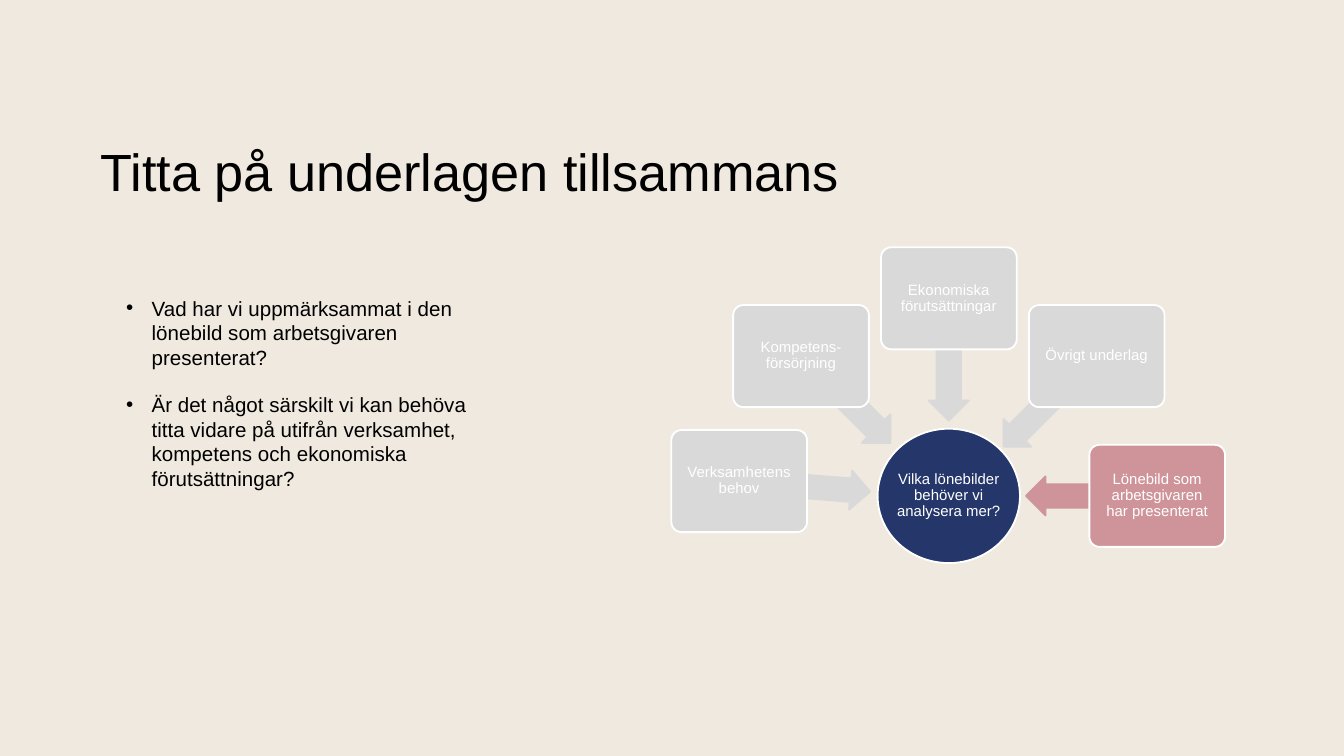
import pptx
import pptx.util
import pptx.dml.color
import pptx.enum.shapes
import pptx.enum.text
import pptx.oxml.ns
from lxml import etree

Inches = pptx.util.Inches
Pt = pptx.util.Pt
RGBColor = pptx.dml.color.RGBColor
MSO_SHAPE = pptx.enum.shapes.MSO_SHAPE
PP_ALIGN = pptx.enum.text.PP_ALIGN
MSO_ANCHOR = pptx.enum.text.MSO_ANCHOR

CREAM = RGBColor(0xEF, 0xE9, 0xDF)
NAVY = RGBColor(0x24, 0x36, 0x6A)
GREY = RGBColor(0xD9, 0xD9, 0xD9)
ROSE = RGBColor(0xCF, 0x94, 0x99)
WHITE = RGBColor(0xFF, 0xFF, 0xFF)
BLACK = RGBColor(0x00, 0x00, 0x00)
FONT = "Arial"

SLIDE_WIDTH = Inches(10)
SLIDE_HEIGHT = SLIDE_WIDTH * 9 // 16

TITLE = "Titta på underlagen tillsammans"
QUESTIONS = [
    "Vad har vi uppmärksammat i den lönebild som arbetsgivaren presenterat?",
    "Är det något särskilt vi kan behöva titta vidare på utifrån verksamhet, "
    "kompetens och ekonomiska förutsättningar?",
]
HUB_TEXT = "Vilka lönebilder behöver vi analysera mer?"
HUB_CENTER = (7.06, 3.69)
HUB_SIZE = (1.06, 1)
NODE_SIZE = (1.01, 0.76)

# text, node center, arrow center, arrow size, arrow rotation, colour
SOURCES = [
    ("Verksamhetens behov", (5.5, 3.58), (5.99, 3.62), (0.97, 0.29), 184.5, GREY),
    ("Kompetens-försörjning", (5.96, 2.65), (6.3, 2.97), (0.92, 0.3), 225, GREY),
    ("Ekonomiska förutsättningar", (7.06, 2.22), (7.06, 2.67), (0.92, 0.3), 270, GREY),
    ("Övrigt underlag", (8.16, 2.65), (7.81, 2.98), (0.97, 0.29), 315, GREY),
    ("Lönebild som arbetsgivaren har presenterat",
     (8.61, 3.69), (8.12, 3.69), (0.97, 0.29), 0, ROSE),
]


def style_font(font, size, color):
    font.name = FONT
    font.size = Pt(size)
    font.color.rgb = color


def set_margins(frame, horizontal, vertical):
    frame.margin_left = frame.margin_right = Inches(horizontal)
    frame.margin_top = frame.margin_bottom = Inches(vertical)


def add_centered(page, kind, center, size, fill, line):
    left, top = (middle - length / 2 for middle, length in zip(center, size))
    shape = page.shapes.add_shape(
        kind, Inches(left), Inches(top), Inches(size[0]), Inches(size[1]))
    shape.shadow.inherit = False
    shape.fill.solid()
    shape.fill.fore_color.rgb = fill
    shape.line.color.rgb = line
    shape.line.width = Pt(1)
    return shape


def add_label(shape, text, horizontal_margin):
    frame = shape.text_frame
    frame.text = text
    frame.word_wrap = True
    frame.vertical_anchor = MSO_ANCHOR.MIDDLE
    set_margins(frame, horizontal_margin, 0)
    para = frame.paragraphs[0]
    para.alignment = PP_ALIGN.CENTER
    para.line_spacing = 0.9
    style_font(para.runs[0].font, 8, WHITE)


def add_title(page):
    title = page.shapes.title
    title.left, title.top = Inches(0.75), Inches(0.75)
    title.width, title.height = Inches(8.18), Inches(1.09)
    frame = title.text_frame
    frame.text = TITLE
    frame.vertical_anchor = MSO_ANCHOR.MIDDLE
    set_margins(frame, 0, 0)
    para = frame.paragraphs[0]
    para.alignment = PP_ALIGN.LEFT
    para.line_spacing = 0.9
    style_font(para.runs[0].font, 28, BLACK)


def add_questions(page):
    box = page.shapes.add_textbox(Inches(0.84), Inches(2.15), Inches(2.9), Inches(1.92))
    frame = box.text_frame
    frame.word_wrap = True
    frame.text = "\n".join(QUESTIONS)
    for index, para in enumerate(frame.paragraphs):
        properties = para._p.get_or_add_pPr()
        properties.set("marL", str(Inches(0.19)))
        properties.set("indent", str(-Inches(0.19)))
        for tag, name, value in (("a:buFont", "typeface", FONT), ("a:buChar", "char", "•")):
            etree.SubElement(properties, pptx.oxml.ns.qn(tag)).set(name, value)
        if index:
            para.space_before = Pt(12)
        style_font(para.runs[0].font, 11, BLACK)


def add_diagram(page):
    hub = add_centered(page, MSO_SHAPE.OVAL, HUB_CENTER, HUB_SIZE, NAVY, WHITE)
    add_label(hub, HUB_TEXT, -0.04)
    for text, center, arrow_center, arrow_size, rotation, color in SOURCES:
        arrow = add_centered(
            page, MSO_SHAPE.LEFT_ARROW, arrow_center, arrow_size, color, color)
        arrow.adjustments[0] = 0.6
        arrow.adjustments[1] = 0.5
        arrow.rotation = rotation
        node = add_centered(page, MSO_SHAPE.ROUNDED_RECTANGLE, center, NODE_SIZE, color, WHITE)
        node.adjustments[0] = 0.1
        add_label(node, text, 0.07)


def main():
    deck = pptx.Presentation()
    deck.slide_width, deck.slide_height = SLIDE_WIDTH, SLIDE_HEIGHT
    page = deck.slides.add_slide(deck.slide_layouts[5])
    page.background.fill.solid()
    page.background.fill.fore_color.rgb = CREAM
    add_title(page)
    add_diagram(page)
    add_questions(page)
    deck.save("out.pptx")


if __name__ == "__main__":
    main()
